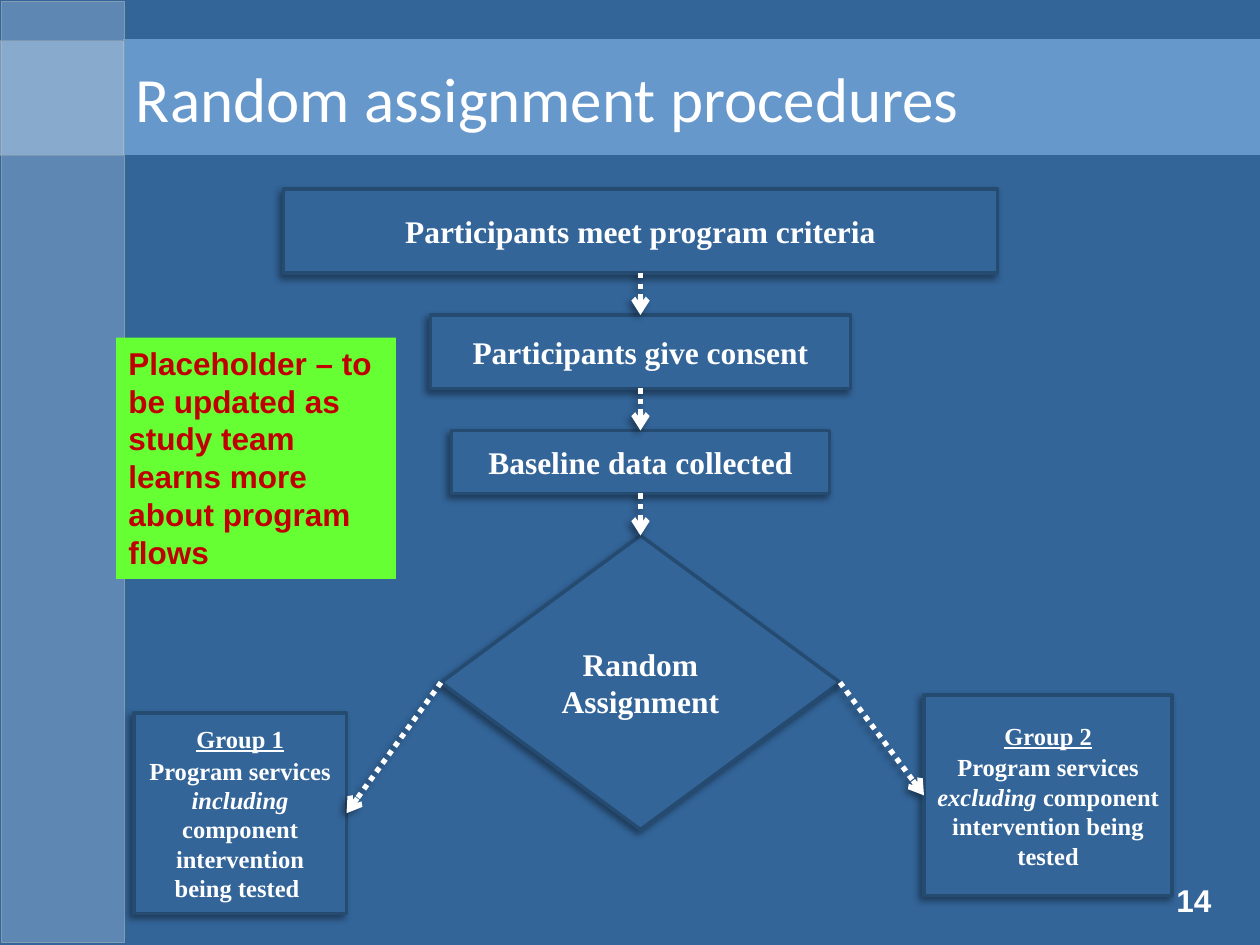
from dataclasses import dataclass
from typing import NamedTuple

import pptx
import pptx.dml.color
import pptx.enum.dml
import pptx.enum.shapes
import pptx.enum.text
import pptx.oxml
import pptx.oxml.ns
import pptx.util

Align = pptx.enum.text.PP_ALIGN
Anchor = pptx.enum.text.MSO_ANCHOR
ShapeKind = pptx.enum.shapes.MSO_SHAPE

COLUMNS, ROWS = 120, 90
SLIDE_WIDTH = pptx.util.Inches(10)
SLIDE_HEIGHT = pptx.util.Inches(7.5)
CENTRE_COLUMN = 61
TOP, LEFT, BOTTOM, RIGHT = range(4)  # connection sites of a rectangle or diamond


@dataclass(frozen=True)
class Theme:
    background: str = "336599"
    box_line: str = "264B71"
    title_fill: str = "6698CC"
    panel: str = "B3CCE6"
    white: str = "FFFFFF"
    note_fill: str = "66FF33"
    note_text: str = "C00000"
    title_font: str = "Calibri"
    flow_font: str = "Times New Roman"
    note_font: str = "Arial"
    title_size: float = 36
    text_size: float = 18
    group_size: float = 14


THEME = Theme()


class Area(NamedTuple):
    column: float
    row: float
    columns: float
    rows: float


class Run(NamedTuple):
    text: str
    italic: bool = False
    underline: bool = False


class Style(NamedTuple):
    size: float
    font: str
    color: str = THEME.white
    bold: bool = True
    align: Align = Align.CENTER
    space_before: float = 0


class Step(NamedTuple):
    text: str
    row: float
    columns: float
    rows: float
    kind: ShapeKind = ShapeKind.RECTANGLE


class Group(NamedTuple):
    name: str
    emphasis: str
    ending: str
    area: Area
    from_site: int
    to_site: int


class Panel(NamedTuple):
    area: Area
    opacity: int
    line: str


FLOW_STYLE = Style(THEME.text_size, THEME.flow_font)
GROUP_STYLE = Style(THEME.group_size, THEME.flow_font, space_before=1.4)
TITLE_STYLE = Style(THEME.title_size, THEME.title_font, bold=False, align=Align.LEFT)
NOTE_STYLE = Style(THEME.text_size, THEME.note_font, THEME.note_text, align=Align.LEFT)
NUMBER_STYLE = Style(THEME.text_size, THEME.note_font, align=Align.RIGHT)

PANELS = [
    Panel(Area(0.12, 0.12, 11.75, 89.64), 34, "839AB3"),
    Panel(Area(0, 3.85, 11.85, 11), 50, "7D99B1"),
]
STEPS = [
    Step("Participants meet program criteria", 18, 68, 8),
    Step("Participants give consent", 30, 40, 7),
    Step("Baseline data collected", 41, 36, 6),
    Step("Random Assignment", 51, 38, 28, ShapeKind.DIAMOND),
]
GROUPS = [
    Group("Group 1", "including ", "component intervention being tested ",
          Area(12.75, 67.9, 20.25, 19.1), LEFT, RIGHT),
    Group("Group 2", "excluding ", "component intervention being tested",
          Area(88, 66.2, 23.65, 19.1), RIGHT, LEFT),
]


def rgb(color: str) -> pptx.dml.color.RGBColor:
    return pptx.dml.color.RGBColor.from_string(color)


def place(area: Area) -> tuple[int, int, int, int]:
    """Turn grid cells into left, top, width and height."""
    return (round(area.column * SLIDE_WIDTH / COLUMNS), round(area.row * SLIDE_HEIGHT / ROWS),
            round(area.columns * SLIDE_WIDTH / COLUMNS), round(area.rows * SLIDE_HEIGHT / ROWS))


def paint(shape, fill: str, line: str, width: float) -> None:
    shape.fill.solid()
    shape.fill.fore_color.rgb = rgb(fill)
    shape.line.color.rgb = rgb(line)
    shape.line.width = pptx.util.Pt(width)


def cast_shadow(shape) -> None:
    shape.element.spPr.append(pptx.oxml.parse_xml(
        f'<a:effectLst {pptx.oxml.ns.nsdecls("a")}>'
        '<a:outerShdw blurRad="50800" dist="38100" dir="8100000" algn="tr" rotWithShape="0">'
        '<a:srgbClr val="000000"><a:alpha val="40000"/></a:srgbClr>'
        '</a:outerShdw></a:effectLst>'))


def write(frame, paragraphs: list[list[Run]], style: Style, anchor: Anchor = Anchor.MIDDLE) -> None:
    frame.word_wrap = True
    frame.vertical_anchor = anchor
    for index, runs in enumerate(paragraphs):
        paragraph = frame.add_paragraph() if index else frame.paragraphs[0]
        paragraph.alignment = style.align
        paragraph.space_before = pptx.util.Pt(style.space_before)
        for part in runs:
            run = paragraph.add_run()
            run.text = part.text
            run.font.name = style.font
            run.font.size = pptx.util.Pt(style.size)
            run.font.color.rgb = rgb(style.color)
            run.font.bold = style.bold
            run.font.italic = part.italic
            run.font.underline = part.underline


def add_panel(slide, panel: Panel) -> None:
    shape = slide.shapes.add_shape(ShapeKind.RECTANGLE, *place(panel.area))
    shape.shadow.inherit = False
    paint(shape, THEME.panel, panel.line, 0.75)
    fill_color = next(shape.element.spPr.iter(pptx.oxml.ns.qn("a:srgbClr")))
    fill_color.append(pptx.oxml.parse_xml(
        f'<a:alpha {pptx.oxml.ns.nsdecls("a")} val="{panel.opacity * 1000}"/>'))


def add_flow_box(slide, kind: ShapeKind, area: Area, paragraphs: list[list[Run]], style: Style):
    shape = slide.shapes.add_shape(kind, *place(area))
    paint(shape, THEME.background, THEME.box_line, 2)
    cast_shadow(shape)
    write(shape.text_frame, paragraphs, style)
    return shape


def add_arrow(slide, source, from_site: int, target, to_site: int) -> None:
    arrow = slide.shapes.add_connector(pptx.enum.shapes.MSO_CONNECTOR.STRAIGHT, 0, 0, 0, 0)
    arrow.begin_connect(source, from_site)
    arrow.end_connect(target, to_site)
    arrow.line.color.rgb = rgb(THEME.white)
    arrow.line.width = pptx.util.Pt(3)
    arrow.line.dash_style = pptx.enum.dml.MSO_LINE.ROUND_DOT
    arrow.line.fill  # the line element exists from here on
    line = next(arrow.element.spPr.iter(pptx.oxml.ns.qn("a:ln")))
    line.append(pptx.oxml.parse_xml(f'<a:tailEnd {pptx.oxml.ns.nsdecls("a")} type="arrow"/>'))
    cast_shadow(arrow)


def add_text(slide, area: Area, text: str, style: Style):
    box = slide.shapes.add_textbox(*place(area))
    write(box.text_frame, [[Run(text)]], style, Anchor.TOP)
    return box


def add_title(slide, text: str) -> None:
    title = slide.shapes.title
    title.left, title.top, title.width, title.height = place(Area(11.75, 3.75, 108.25, 11))
    paint(title, THEME.title_fill, THEME.title_fill, 0.75)
    write(title.text_frame, [[Run(text)]], TITLE_STYLE)


def add_flow(slide) -> None:
    previous = None
    for step in STEPS:
        area = Area(CENTRE_COLUMN - step.columns / 2, step.row, step.columns, step.rows)
        shape = add_flow_box(slide, step.kind, area, [[Run(step.text)]], FLOW_STYLE)
        if previous is not None:
            add_arrow(slide, previous, BOTTOM, shape, TOP)
        previous = shape
    for group in GROUPS:
        paragraphs = [[Run(group.name, underline=True)],
                      [Run("Program services "), Run(group.emphasis, italic=True), Run(group.ending)]]
        shape = add_flow_box(slide, ShapeKind.RECTANGLE, group.area, paragraphs, GROUP_STYLE)
        add_arrow(slide, previous, group.from_site, shape, group.to_site)


def main() -> None:
    presentation = pptx.Presentation()
    presentation.slide_width, presentation.slide_height = SLIDE_WIDTH, SLIDE_HEIGHT
    slide = presentation.slides.add_slide(presentation.slide_layouts.get_by_name("Title Only"))
    slide.background.fill.solid()
    slide.background.fill.fore_color.rgb = rgb(THEME.background)
    for panel in PANELS:
        add_panel(slide, panel)
    add_title(slide, "Random assignment procedures")
    add_text(slide, Area(108.85, 83.3, 7.7, 4.8), "14", NUMBER_STYLE)
    add_flow(slide)
    note = add_text(slide, Area(11.05, 32.15, 26.65, 23),
                    "Placeholder – to be updated as study team learns more about program flows", NOTE_STYLE)
    note.fill.solid()
    note.fill.fore_color.rgb = rgb(THEME.note_fill)
    presentation.save("out.pptx")


if __name__ == "__main__":
    main()
